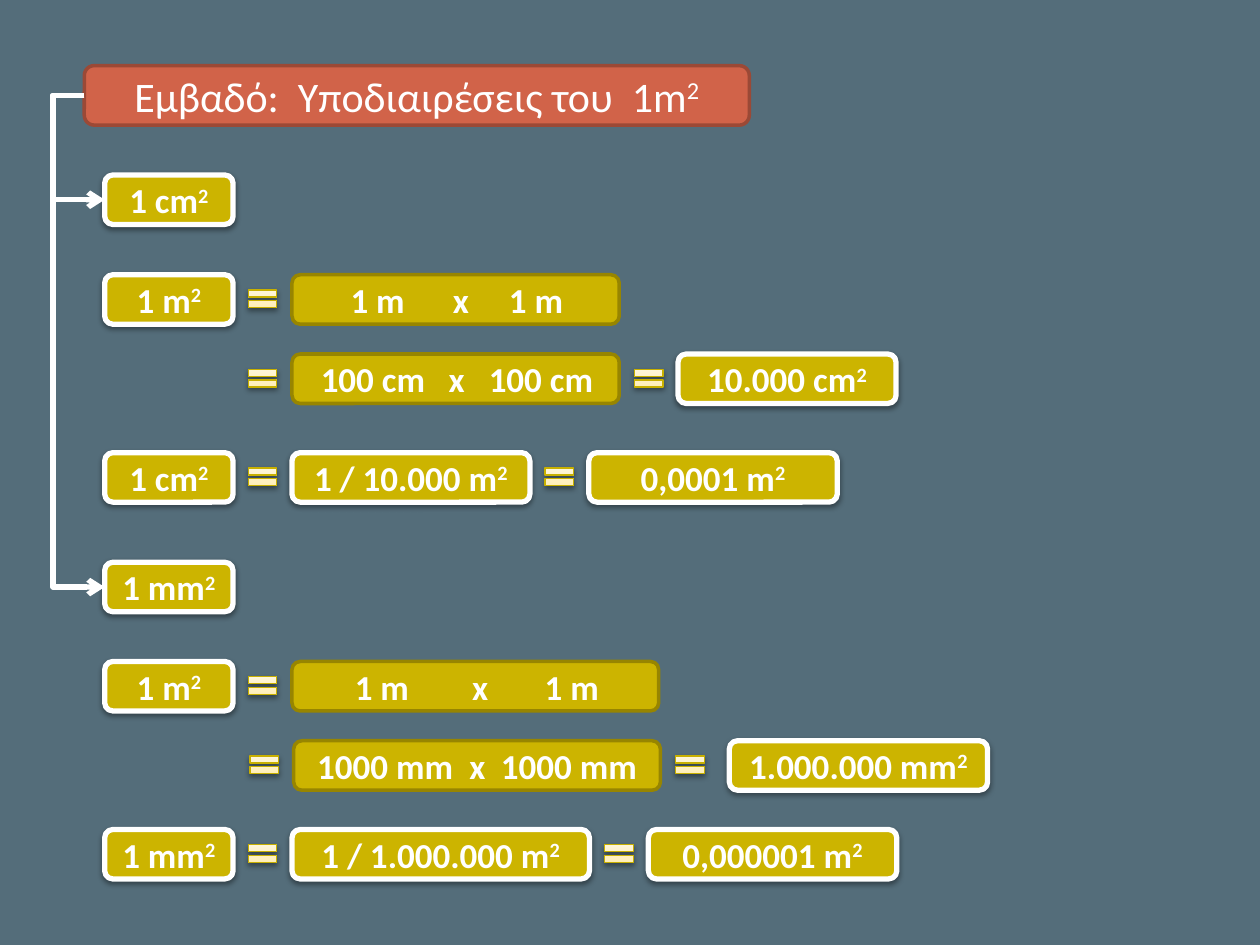
from dataclasses import dataclass

from lxml import etree
from pptx import Presentation
from pptx import util as u
from pptx.dml import color
from pptx.enum import shapes, text
from pptx.oxml import ns, parse_xml


@dataclass(frozen=True)
class Theme:
    background: str = "546D7A"
    title: str = "D16349"
    title_line: str = "9B4936"
    gold: str = "CCB400"
    gold_line: str = "978500"
    white: str = "FFFFFF"
    sign_line: str = "C8B000"
    sign_stops: tuple = ((0, "FFEBA5"), (35, "FFF0BF"), (100, "FFF9E7"))
    shadow: str = "000000"
    font: str = "Calibri"
    title_size: int = 24
    label_size: int = 20


def rgb(value):
    return color.RGBColor.from_string(value)


def add_node(parent, tag, **attributes):
    node = etree.SubElement(parent, ns.qn(tag))
    for name, value in attributes.items():
        node.set(name, str(value))
    return node


def write_text(box, content, *, font, size, fill, bold=False, tabs=()):
    """Write one line; what follows ^ is raised, and tabs are stops in points."""
    frame = box.text_frame
    frame.word_wrap = True
    frame.vertical_anchor = text.MSO_ANCHOR.MIDDLE
    para = frame.paragraphs[0]
    para.alignment = text.PP_ALIGN.LEFT if tabs else text.PP_ALIGN.CENTER
    if tabs:
        tab_list = add_node(para._p.get_or_add_pPr(), "a:tabLst")
        for stop in tabs:
            add_node(tab_list, "a:tab", pos=int(u.Pt(stop)), algn="l")
    for index, part in enumerate(content.split("^")):
        span = para.add_run()
        span.text = part
        span.font.name = font
        span.font.size = u.Pt(size)
        span.font.bold = bold
        span.font.color.rgb = rgb(fill)
        if index:
            span._r.get_or_add_rPr().set("baseline", "30000")


class Board:
    GAP = 5.67
    ROW_HEIGHT = 28.3
    SIGN_WIDTH, SIGN_HEIGHT = 22.3, 17

    def __init__(self, page, theme):
        self.page, self.theme = page, theme
        page.background.fill.solid()
        page.background.fill.fore_color.rgb = rgb(theme.background)

    def shape(self, kind, left, top, width, height, line, weight, shadow):
        item = self.page.shapes.add_shape(
            kind, u.Pt(left), u.Pt(top), u.Pt(width), u.Pt(height))
        item.line.color.rgb = rgb(line)
        item.line.width = u.Pt(weight)
        item.shadow.inherit = False
        if shadow:
            effects = item._element.spPr.find(ns.qn("a:effectLst"))
            outer = add_node(effects, "a:outerShdw", blurRad=int(u.Pt(3.1)),
                             dist=int(u.Pt(1.6)), dir=5400000, rotWithShape=0)
            tint = add_node(outer, "a:srgbClr", val=self.theme.shadow)
            add_node(tint, "a:alpha", val=38000)
        return item

    def box(self, content, left, top, width, height, *, fill, line, weight,
            size, bold=False, shadow=False, tabs=()):
        box = self.shape(shapes.MSO_SHAPE.ROUNDED_RECTANGLE, left, top, width,
                         height, line, weight, shadow)
        box.fill.solid()
        box.fill.fore_color.rgb = rgb(fill)
        write_text(box, content, font=self.theme.font, size=size,
                   fill=self.theme.white, bold=bold, tabs=tabs)
        return box

    def title(self, content, left, top, width, height):
        theme = self.theme
        return self.box(content, left, top, width, height, fill=theme.title,
                        line=theme.title_line, weight=2, size=theme.title_size)

    def label(self, content, left, top, width, tabs=()):
        """A value has a white edge; a product, set on tabs, has a dark one."""
        theme = self.theme
        return self.box(content, left, top, width, self.ROW_HEIGHT,
                        fill=theme.gold, size=theme.label_size, bold=True,
                        line=theme.gold_line if tabs else theme.white,
                        weight=2 if tabs else 3, shadow=not tabs, tabs=tabs)

    def equals(self, left, top):
        sign = self.shape(shapes.MSO_SHAPE.MATH_EQUAL, left, top + 5.3,
                          self.SIGN_WIDTH, self.SIGN_HEIGHT,
                          self.theme.sign_line, 0.75, True)
        stops = "".join(
            f'<a:gs pos="{place * 1000}"><a:srgbClr val="{value}"/></a:gs>'
            for place, value in self.theme.sign_stops)
        gradient = parse_xml(
            f'<a:gradFill {ns.nsdecls("a")} rotWithShape="1"><a:gsLst>{stops}'
            '</a:gsLst><a:lin ang="16200000" scaled="1"/></a:gradFill>')
        sign._element.spPr.find(ns.qn("a:prstGeom")).addnext(gradient)

    def row(self, left, top, parts):
        """Set labels from left to right with an equals sign between them.

        A part is (text, width, tabs, extra gap); None leaves its place empty.
        """
        for index, part in enumerate(parts):
            if index:
                self.equals(left, top)
                left += self.SIGN_WIDTH + self.GAP
            if part:
                content, width, tabs, extra = part
                left += extra
                self.label(content, left, top, width, tabs)
                left += width + self.GAP

    def branch(self, start, end, rail):
        """Bent arrow between two left sides, by way of a rail at x."""
        arrow = self.page.shapes.add_connector(
            shapes.MSO_CONNECTOR.ELBOW, 0, 0, 0, 0)
        arrow.begin_connect(start, 1)
        arrow.end_connect(end, 1)
        arrow.line.color.rgb = rgb(self.theme.white)
        arrow.line.width = u.Pt(3)
        properties = arrow._element.spPr
        bend = round((u.Pt(rail) - arrow.begin_x) / arrow.width * 100000)
        guides = properties.find(ns.qn("a:prstGeom")).get_or_add_avLst()
        add_node(guides, "a:gd", name="adj1", fmla=f"val {bend}")
        add_node(arrow.line._get_or_add_ln(), "a:tailEnd", type="arrow")
        add_node(properties, "a:effectLst")


def part(content, width, tabs=(), extra=0):
    return content, width, tabs, extra


def main():
    deck = Presentation()
    deck.slide_width, deck.slide_height = u.Pt(720), u.Pt(540)
    page = deck.slides.add_slide(deck.slide_layouts[6])
    board = Board(page, Theme())
    left, unit = 59.8, 73.4
    sign_left = left + unit + board.GAP

    # Title and the two branches
    title = board.title("Εμβαδό:  Υποδιαιρέσεις του  1m^2", 48.2, 37.5, 380, 34)
    for name, top in (("1 cm^2", 100), ("1 mm^2", 321.3)):
        board.branch(title, board.label(name, left, top, unit), 30.2)

    # Equations: left edge, top, parts
    rows = (
        (left, 157, (part("1 m^2", unit),
                     part("\t1 m\tx\t1 m", 187, (25, 83.5, 115.5)))),
        (sign_left, 202.3, (None,
                            part("\t100 cm\tx\t100 cm", 187, (8, 81, 104)),
                            part("10.000 cm^2", 124.6))),
        (left, 258.7, (part("1 cm^2", unit),
                       part("1 / 10.000 m^2", 136),
                       part("0,0001 m^2", 142))),
        (left, 378, (part("1 m^2", unit),
                     part("\t1 m\tx\t1 m", 209.6, (27.5, 94.5, 136)))),
        (sign_left + 1, 423.3, (None,
                                part("\t1000 mm\tx\t1000 mm", 209.6, (5, 92, 110)),
                                part("1.000.000 mm^2", 147.6, extra=5.67))),
        (left, 474, (part("1 mm^2", unit),
                     part("1 / 1.000.000 m^2", 170),
                     part("0,000001 m^2", 142))),
    )
    for row in rows:
        board.row(*row)

    deck.save("out.pptx")


if __name__ == "__main__":
    main()
